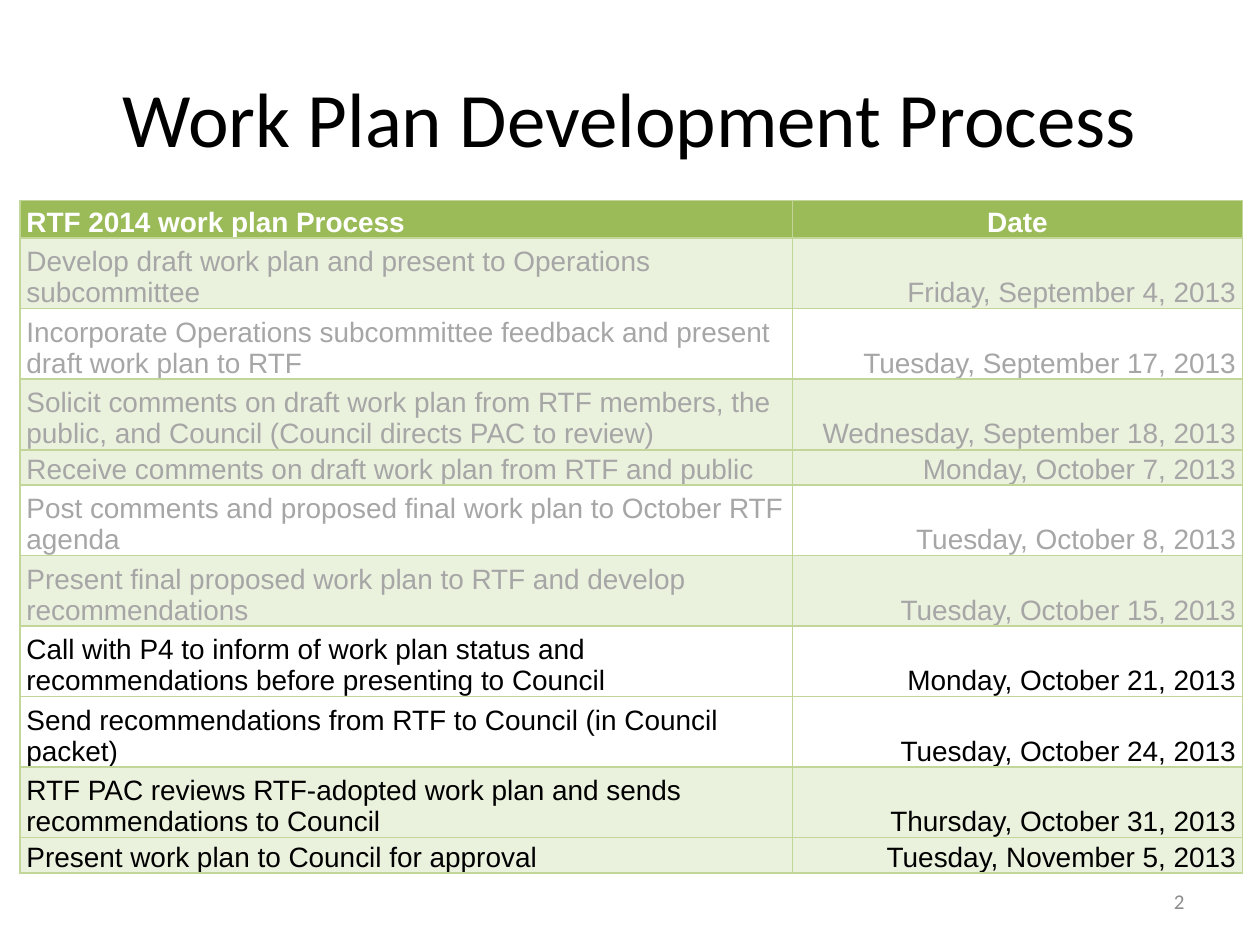
import pptx
import pptx.dml.color
import pptx.enum.text
import pptx.oxml
import pptx.oxml.ns
import pptx.util
from dataclasses import dataclass

Inches = pptx.util.Inches
ALIGN = pptx.enum.text.PP_ALIGN
ANCHOR = pptx.enum.text.MSO_ANCHOR


@dataclass(frozen=True)
class Theme:
    heading_font: str = "Calibri"
    table_font: str = "Arial"
    title_size: int = 44
    table_size: int = 16
    number_size: int = 12
    text: str = "000000"
    done: str = "A6A6A6"
    header_text: str = "FFFFFF"
    header_fill: str = "9BBB59"
    band_fill: str = "EAF1DD"
    border: str = "C2D69A"
    number: str = "8C8C8C"


THEME = Theme()
HEADER = ("RTF 2014 work plan Process", "Date")
HEADER_HEIGHT, LINE_HEIGHT = 0.3, 0.28

# Step, date, lines of text, shaded, done
STEPS = [
    ("Develop draft work plan and present to Operations subcommittee",
     "Friday, September 4, 2013", 2, True, True),
    ("Incorporate Operations subcommittee feedback and present draft work plan to RTF",
     "Tuesday, September 17, 2013", 2, False, True),
    ("Solicit comments on draft work plan from RTF members, the public, "
     "and Council (Council directs PAC to review)",
     "Wednesday, September 18, 2013", 2, True, True),
    ("Receive comments on draft work plan from RTF and public",
     "Monday, October 7, 2013", 1, True, True),
    ("Post comments and proposed final work plan to October RTF agenda",
     "Tuesday, October 8, 2013", 2, False, True),
    ("Present final proposed work plan to RTF and develop recommendations",
     "Tuesday, October 15, 2013", 2, True, True),
    ("Call with P4 to inform of work plan status and recommendations "
     "before presenting to Council",
     "Monday, October 21, 2013", 2, False, False),
    ("Send recommendations from RTF to Council (in Council packet)",
     "Tuesday, October 24, 2013", 2, False, False),
    ("RTF PAC reviews RTF-adopted work plan and sends recommendations to Council",
     "Thursday, October 31, 2013", 2, True, False),
    ("Present work plan to Council for approval",
     "Tuesday, November 5, 2013", 1, True, False),
]


def set_attributes(target, values):
    for name, value in values.items():
        setattr(target, name, value)


def place(shape, left, top, width, height):
    set_attributes(shape, {"left": Inches(left), "top": Inches(top),
                           "width": Inches(width), "height": Inches(height)})


def write_text(frame, text, font, size, color, alignment, bold=False):
    paragraph = frame.paragraphs[0]
    paragraph.alignment = alignment
    run = paragraph.add_run()
    run.text = text
    set_attributes(run.font, {"name": font, "size": pptx.util.Pt(size), "bold": bold})
    run.font.color.rgb = pptx.dml.color.RGBColor.from_string(color)


def add_title(slide, text):
    title = slide.shapes.title
    place(title, 0.5, 0.3, 9, 1.25)
    set_attributes(title.text_frame, {"vertical_anchor": ANCHOR.MIDDLE, "word_wrap": True})
    write_text(title.text_frame, text, THEME.heading_font, THEME.title_size,
               THEME.text, ALIGN.CENTER)


def set_borders(cell):
    properties = cell._tc.get_or_add_tcPr()
    for index, side in enumerate(("lnL", "lnR", "lnT", "lnB")):
        properties.insert(index, pptx.oxml.parse_xml(
            f'<a:{side} {pptx.oxml.ns.nsdecls("a")} w="12700"><a:solidFill>'
            f'<a:srgbClr val="{THEME.border}"/></a:solidFill></a:{side}>'))


def fill_cell(cell, text, color, fill, alignment, bold=False):
    set_attributes(cell, {"margin_left": Inches(0.05), "margin_right": Inches(0.05),
                          "margin_top": 0, "margin_bottom": 0,
                          "vertical_anchor": ANCHOR.BOTTOM})
    write_text(cell.text_frame, text, THEME.table_font, THEME.table_size,
               color, alignment, bold)
    set_borders(cell)
    if fill:
        cell.fill.solid()
        cell.fill.fore_color.rgb = pptx.dml.color.RGBColor.from_string(fill)
    else:
        cell.fill.background()


def add_schedule(slide):
    heights = [HEADER_HEIGHT] + [step[2] * LINE_HEIGHT for step in STEPS]
    table = slide.shapes.add_table(len(heights), 2, Inches(0.16), Inches(1.59),
                                   Inches(9.7), Inches(sum(heights))).table
    for column, width in zip(table.columns, (6.13, 3.57)):
        column.width = Inches(width)
    for row, height in zip(table.rows, heights):
        row.height = Inches(height)

    # Header row
    for column, alignment in enumerate((ALIGN.LEFT, ALIGN.CENTER)):
        fill_cell(table.cell(0, column), HEADER[column], THEME.header_text,
                  THEME.header_fill, alignment, bold=True)

    # One row per step, finished steps in grey
    for row, (step, date, _, shaded, done) in enumerate(STEPS, start=1):
        color = THEME.done if done else THEME.text
        fill = THEME.band_fill if shaded else None
        fill_cell(table.cell(row, 0), step, color, fill, ALIGN.LEFT)
        fill_cell(table.cell(row, 1), date, color, fill, ALIGN.RIGHT)


def add_page_number(slide, number):
    box = slide.shapes.add_textbox(Inches(7.17), Inches(6.95), Inches(2.33), Inches(0.4))
    set_attributes(box.text_frame, {"word_wrap": True, "vertical_anchor": ANCHOR.MIDDLE})
    write_text(box.text_frame, number, THEME.heading_font, THEME.number_size,
               THEME.number, ALIGN.RIGHT)


def main():
    presentation = pptx.Presentation()
    set_attributes(presentation, {"slide_width": Inches(10), "slide_height": Inches(7.5)})
    slide = presentation.slides.add_slide(presentation.slide_layouts[5])
    add_title(slide, "Work Plan Development Process")
    add_schedule(slide)
    add_page_number(slide, "2")
    presentation.save("out.pptx")


if __name__ == "__main__":
    main()
